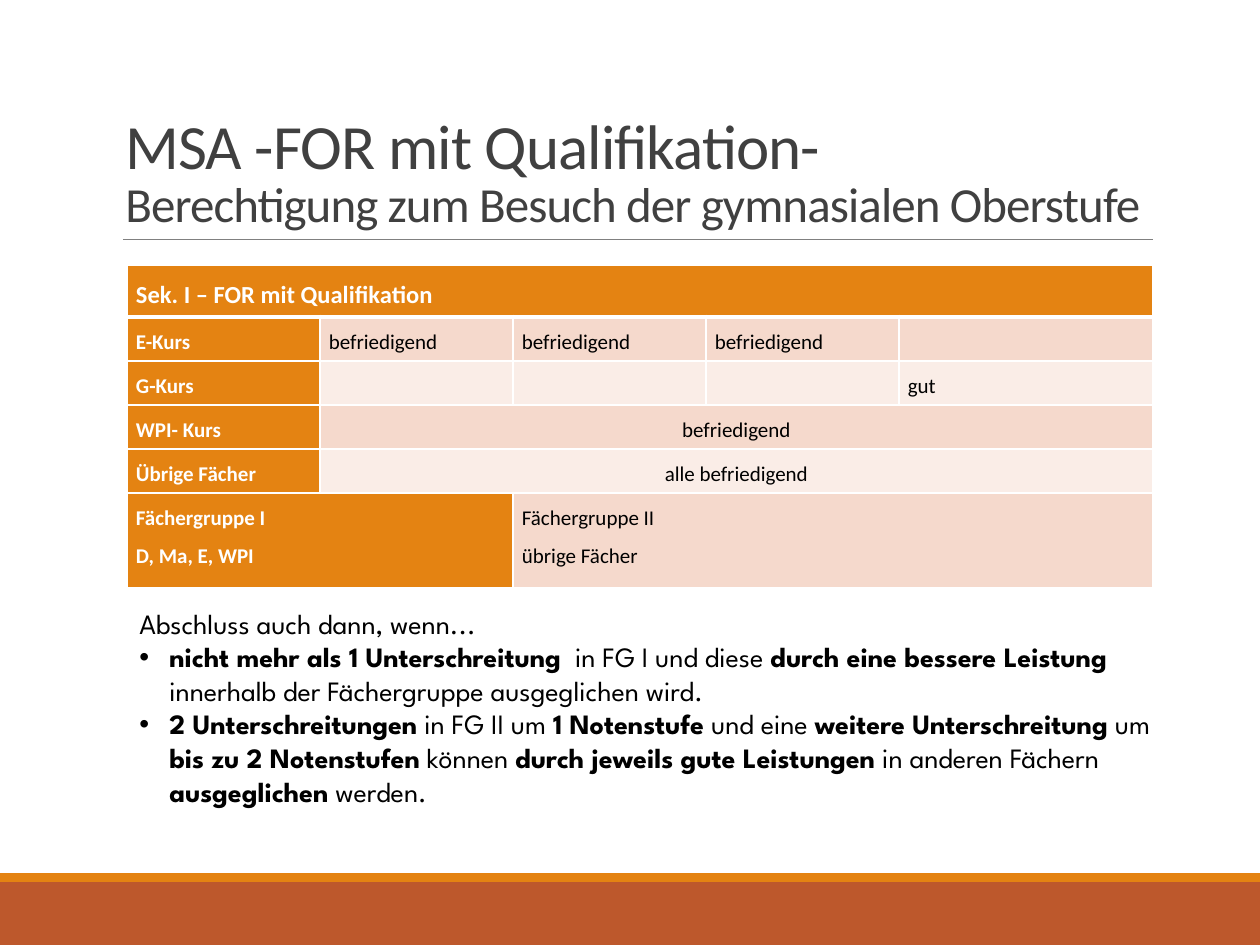
from dataclasses import dataclass

from lxml import etree
from pptx import Presentation
from pptx.dml.color import RGBColor
from pptx.enum.shapes import MSO_CONNECTOR, MSO_SHAPE
from pptx.enum.text import MSO_ANCHOR, PP_ALIGN
from pptx.oxml.ns import qn
from pptx.util import Pt

RECTANGLE = MSO_SHAPE.RECTANGLE
STRAIGHT = MSO_CONNECTOR.STRAIGHT
BOTTOM = MSO_ANCHOR.BOTTOM
LEFT, CENTER = PP_ALIGN.LEFT, PP_ALIGN.CENTER
EMU_PER_PX = 914400 / 126


@dataclass(frozen=True)
class Theme:
    """Colours, fonts and type sizes of the slide."""
    accent: str = "E48312"
    footer: str = "BD582C"
    band_dark: str = "F5D9CC"
    band_light: str = "FAEDE7"
    rule: str = "808080"
    title: str = "404040"
    ink: str = "000000"
    paper: str = "FFFFFF"
    table_font: str = "Calibri"
    note_font: str = "League Spartan"
    title_size: int = 36
    subtitle_size: int = 28
    head_size: int = 14
    cell_size: int = 12
    note_size: int = 16


THEME = Theme()
COLUMNS = [193, 193, 193, 193, 254]
ROWS = [52, 44, 44, 44, 44, 95]
GRADE = "befriedigend"
CELLS = [
    [("Sek. I – FOR mit Qualifikation", 5)],
    [("E-Kurs", 1), (GRADE, 1), (GRADE, 1), (GRADE, 1), ("", 1)],
    [("G-Kurs", 1), ("", 1), ("", 1), ("", 1), ("gut", 1)],
    [("WPI- Kurs", 1), (GRADE, 4)],
    [("Übrige Fächer", 1), ("alle befriedigend", 4)],
    [("Fächergruppe I\nD, Ma, E, WPI", 2), ("Fächergruppe II\nübrige Fächer", 3)],
]
NOTE_LEAD = "Abschluss auch dann, wenn..."
NOTE_BULLETS = [
    "**nicht mehr als 1 Unterschreitung**  in FG I und diese **durch eine bessere "
    "Leistung** innerhalb der Fächergruppe ausgeglichen wird.",
    "**2 Unterschreitungen** in FG II um **1 Notenstufe** und eine **weitere "
    "Unterschreitung** um **bis zu 2 Notenstufen** können **durch jeweils gute "
    "Leistungen** in anderen Fächern **ausgeglichen** werden.",
]


def px(length):
    """Turn pixels into EMU."""
    return round(length * EMU_PER_PX)


def set_font(font, name, size, color, bold=False):
    """Set the face, size, colour and weight of a font."""
    font.name, font.size, font.bold = name, Pt(size), bold
    font.color.rgb = RGBColor.from_string(color)


def add_text_box(page, box):
    """Add a wrapping text box and return its text frame."""
    frame = page.shapes.add_textbox(*map(px, box)).text_frame
    frame.word_wrap = True
    return frame


def add_bar(page, box, color):
    """Add a plain filled bar."""
    bar = page.shapes.add_shape(RECTANGLE, *map(px, box))
    bar.shadow.inherit = False
    bar.fill.solid()
    bar.fill.fore_color.rgb = RGBColor.from_string(color)
    bar.line.fill.background()


def add_footer(page, box):
    """Add the footer band with its thin stripe on top."""
    left, top, width, height = box
    stripe = 9
    add_bar(page, (left, top + stripe, width, height - stripe), THEME.footer)
    add_bar(page, (left, top, width, stripe), THEME.accent)


def add_title(page, box):
    """Add the two-part title and the rule below it."""
    left, top, width, height = box
    frame = add_text_box(page, box)
    frame.vertical_anchor = BOTTOM
    para = frame.paragraphs[0]
    para.line_spacing = 0.85
    set_font(para.font, THEME.table_font, THEME.title_size, THEME.title)
    heading = para.add_run()
    heading.text = "MSA -FOR mit Qualifikation-"
    para.add_line_break()
    subtitle = para.add_run()
    subtitle.text = "Berechtigung zum Besuch der gymnasialen Oberstufe"
    for span, size in ((heading, THEME.title_size), (subtitle, THEME.subtitle_size)):
        span.font.size = Pt(size)
        span.font._element.set("spc", "-50")
    bottom = px(top + height)
    rule = page.shapes.add_connector(STRAIGHT, px(left + 10), bottom, px(left + width), bottom)
    rule.line.color.rgb = RGBColor.from_string(THEME.rule)
    rule.line.width = Pt(0.5)
    etree.SubElement(rule._element.spPr, qn("a:effectLst"))


def set_borders(cell, top, bottom):
    """Draw the cell's borders with the given top and bottom widths in points."""
    properties = cell._tc.get_or_add_tcPr()
    sides = {"lnL": 1, "lnR": 1, "lnT": top, "lnB": bottom}
    for position, (side, width) in enumerate(sides.items()):
        line = etree.Element(qn(f"a:{side}"), w=str(Pt(width)))
        fill = etree.SubElement(line, qn("a:solidFill"))
        etree.SubElement(fill, qn("a:srgbClr"), val=THEME.paper)
        properties.insert(position, line)


def fill_cell(cell, text, size, color, bold, align):
    """Write a cell's paragraphs."""
    cell.text = text
    for para in cell.text_frame.paragraphs:
        para.alignment = align
        if text:
            para.line_spacing = 1.5
        set_font(para.font, THEME.table_font, size, color, bold)


def add_grade_table(page, box):
    """Add the table of required grades."""
    table = page.shapes.add_table(len(ROWS), len(COLUMNS), *map(px, box)).table
    for column, width in zip(table.columns, COLUMNS):
        column.width = px(width)
    for row, height in zip(table.rows, ROWS):
        row.height = px(height)
    for row_index, entries in enumerate(CELLS):
        band = THEME.band_dark if row_index % 2 else THEME.band_light
        size = THEME.cell_size if row_index else THEME.head_size
        head_span = entries[0][1]
        for column_index in range(len(COLUMNS)):
            cell = table.cell(row_index, column_index)
            cell.margin_left = cell.margin_right = px(9)
            cell.margin_top = cell.margin_bottom = 0
            cell.fill.solid()
            color = THEME.accent if column_index < head_span else band
            cell.fill.fore_color.rgb = RGBColor.from_string(color)
            set_borders(cell, 3 if row_index == 1 else 1, 1 if row_index else 3)
        start = 0
        for text, span in entries:
            cell = table.cell(row_index, start)
            if span > 1:
                cell.merge(table.cell(row_index, start + span - 1))
            is_head = start == 0
            color = THEME.paper if is_head else THEME.ink
            fill_cell(cell, text, size, color, is_head, CENTER if span == 4 else LEFT)
            start += span


def add_bullet(para, text):
    """Make a bulleted paragraph, bold between double asterisks."""
    properties = para._p.get_or_add_pPr()
    properties.set("marL", str(px(30)))
    properties.set("indent", str(px(-30)))
    set_font(para.font, THEME.note_font, THEME.note_size, THEME.ink)
    bullet_font = etree.Element(qn("a:buFont"), typeface="Arial")
    bullet = etree.Element(qn("a:buChar"), char="•")
    properties.insert(0, bullet_font)
    properties.insert(1, bullet)
    for index, part in enumerate(text.split("**")):
        if part:
            span = para.add_run()
            span.text = part
            span.font.bold = index % 2 == 1


def add_notes(page, box):
    """Add the exceptions below the table."""
    frame = add_text_box(page, box)
    lead = frame.paragraphs[0]
    lead.text = NOTE_LEAD
    set_font(lead.font, THEME.note_font, THEME.note_size, THEME.ink)
    for text in NOTE_BULLETS:
        add_bullet(frame.add_paragraph(), text)


def main():
    """Build and save the slide."""
    deck = Presentation()
    deck.slide_width, deck.slide_height = px(1260), px(945)
    page = deck.slides.add_slide(deck.slide_layouts[6])
    add_footer(page, (0, 873, 1260, 72))
    add_title(page, (113, 39, 1040, 200))
    add_grade_table(page, (127, 265, sum(COLUMNS), sum(ROWS)))
    add_notes(page, (127, 600, 1038, 217))
    deck.save("out.pptx")


if __name__ == "__main__":
    main()
